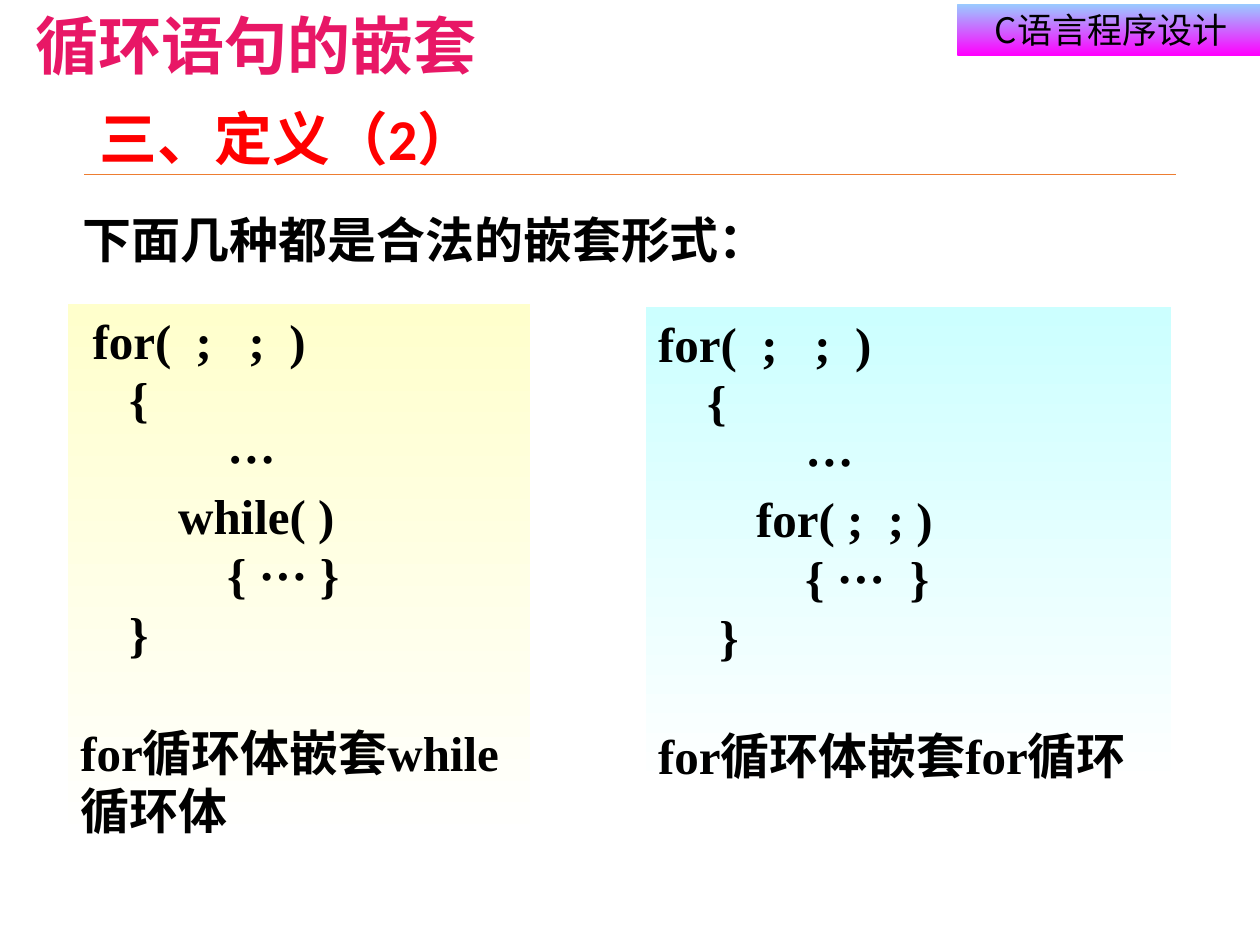
"""Builds the slide on legal forms of nested loop statements."""
import pptx
import pptx.dml.color
import pptx.enum.shapes
import pptx.enum.text
import pptx.oxml
import pptx.oxml.ns
import pptx.util

Cm, Pt = pptx.util.Cm, pptx.util.Pt
RGB = pptx.dml.color.RGBColor
ALIGN = pptx.enum.text.PP_ALIGN
ANCHOR = pptx.enum.text.MSO_ANCHOR
AUTO = pptx.enum.text.MSO_AUTO_SIZE

BLACK, WHITE, RED = RGB(0, 0, 0), RGB(255, 255, 255), RGB(255, 0, 0)
PINK, ORANGE = RGB(0xE8, 0x17, 0x66), RGB(0xED, 0x7D, 0x31)
SKY, MAGENTA = RGB(0x99, 0xCC, 0xFF), RGB(0xFF, 0, 0xFF)
CREAM, AQUA = RGB(0xFF, 0xFF, 0xCC), RGB(0xCC, 0xFF, 0xFF)
CJK = "Noto Sans CJK SC"

COURSE = "C语言程序设计"
TOPIC = "循环语句的嵌套"
TITLE = "三、定义（2）"
INTRO = "下面几种都是合法的嵌套形式："
PANELS = [
    ((1.37, 6.13, 9.32, 10.92), CREAM,
     [" for(  ;   ;  )", "    {", "            ···", "        while( )",
      "            { ··· }", "    }"],
     "for循环体嵌套while循环体"),
    ((13.02, 6.19, 10.59, 9.75), AQUA,
     ["for(  ;   ;  )", "    {", "            ···", "        for( ;  ; )",
      "            { ···  }", "     }"],
     "for循环体嵌套for循环"),
]


def write(p, text, size, color=BLACK, font=CJK, bold=True, east=CJK):
    p.text = text
    f = p.font
    f.size, f.bold, f.name = Pt(size), bold, font
    f.color.rgb = color
    latin = p._p.pPr.find(".//" + pptx.oxml.ns.qn("a:latin"))
    ea = pptx.oxml.parse_xml(
        f'<a:ea {pptx.oxml.ns.nsdecls("a")} typeface="{east}"/>')
    latin.addnext(ea)


def add_panel(slide, box, top, bottom):
    sp = slide.shapes.add_shape(
        pptx.enum.shapes.MSO_SHAPE.RECTANGLE, *map(Cm, box))
    sp.shadow.inherit = False
    sp.line.fill.background()
    sp.fill.gradient()
    sp.fill.gradient_angle = 270
    for stop, color in zip(sp.fill.gradient_stops, (top, bottom)):
        stop.color.rgb = color
    sp.text_frame.word_wrap = True
    return sp.text_frame


def add_text(slide, box):
    tf = slide.shapes.add_textbox(*map(Cm, box)).text_frame
    tf.word_wrap = True
    return tf.paragraphs[0]


def add_rule(slide, left, right, y):
    line = slide.shapes.add_connector(
        pptx.enum.shapes.MSO_CONNECTOR.STRAIGHT, Cm(left), Cm(y), Cm(right), Cm(y))
    line.line.fill.solid()
    line.line.fill.fore_color.rgb = ORANGE
    line.line.width = Pt(0.25)
    line._element.spPr.append(pptx.oxml.parse_xml(
        f'<a:effectLst {pptx.oxml.ns.nsdecls("a")}/>'))


def add_code(slide, box, color, code, caption):
    tf = add_panel(slide, box, color, WHITE)
    tf.vertical_anchor = ANCHOR.TOP
    tf.auto_size = AUTO.SHAPE_TO_FIT_TEXT
    for i, text in enumerate(code + [caption]):
        p = tf.add_paragraph() if i else tf.paragraphs[0]
        p.alignment = ALIGN.LEFT
        p.line_spacing = Pt(33.5)
        write(p, text, 28, font="Times New Roman")
    p.space_before = Pt(34.5)


def main():
    prs = pptx.Presentation()
    prs.slide_width, prs.slide_height = Cm(25.4), Cm(19.05)
    slide = prs.slides.add_slide(prs.slide_layouts[5])

    tf = add_panel(slide, (19.3, 0.08, 6.2, 1.04), SKY, MAGENTA)
    tf.vertical_anchor = ANCHOR.MIDDLE
    tf.paragraphs[0].alignment = ALIGN.CENTER
    write(tf.paragraphs[0], COURSE, 20, bold=False)

    p = add_text(slide, (0.06, 0, 10.2, 1.04))
    p.alignment = ALIGN.CENTER
    write(p, TOPIC, 36, PINK, "Noto Sans CJK JP", east="Noto Sans CJK JP")

    add_rule(slide, 1.7, 23.71, 3.52)

    title = slide.shapes.title
    title.left, title.top, title.width, title.height = map(
        Cm, (1.75, 1.02, 21.89, 3.68))
    tf = title.text_frame
    tf.vertical_anchor, tf.auto_size = ANCHOR.MIDDLE, AUTO.NONE
    p = tf.paragraphs[0]
    p.alignment, p.line_spacing = ALIGN.LEFT, 0.9
    write(p, TITLE, 33, RED, "Calibri")

    p = add_text(slide, (1.42, 4.32, 23.22, 1.6))
    p.line_spacing = 0.8
    write(p, INTRO, 28)

    for panel in PANELS:
        add_code(slide, *panel)

    prs.save("out.pptx")


if __name__ == "__main__":
    main()
